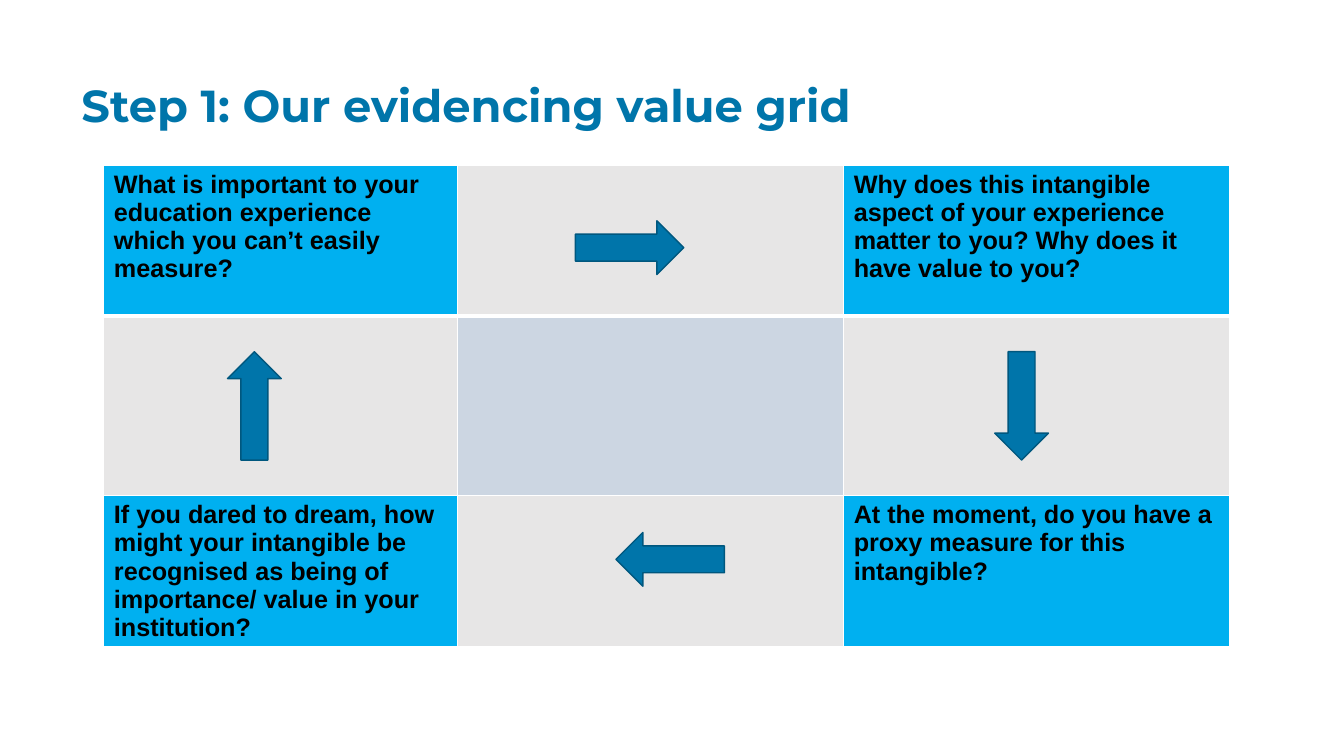
import pptx
import pptx.util
import pptx.dml.color
import pptx.enum.shapes
import pptx.enum.text
import pptx.oxml
import pptx.oxml.ns

Pt = pptx.util.Pt
RGB = pptx.dml.color.RGBColor.from_string
SHAPE = pptx.enum.shapes.MSO_SHAPE
COLORS = {"title": "0075AA", "question": "00B0F0", "path": "E7E6E6", "center": "CCD6E2",
          "text": "000000", "border": "FFFFFF", "outline": "00577E"}


def write(tf, text, font="Arial", size=18, color="text", spacing=1.0):
    p = tf.paragraphs[0]
    p.alignment = pptx.enum.text.PP_ALIGN.LEFT
    p.line_spacing = spacing
    r = p.add_run()
    r.text = text
    r.font.name = font
    r.font.size = Pt(size)
    r.font.bold = True
    r.font.color.rgb = RGB(COLORS[color])


def border(cell, side, width):
    ns = pptx.oxml.ns.nsdecls("a")
    cell._tc.get_or_add_tcPr().append(pptx.oxml.parse_xml(
        f'<a:{side} {ns} w="{Pt(width)}"><a:solidFill>'
        f'<a:srgbClr val="{COLORS["border"]}"/></a:solidFill></a:{side}>'))


prs = pptx.Presentation()
prs.slide_width, prs.slide_height = Pt(960), Pt(540)
s = prs.slides.add_slide(prs.slide_layouts[5])

title = s.shapes.title
title.left, title.top, title.width, title.height = Pt(51), Pt(56.5), Pt(828), Pt(50)
tf = title.text_frame
tf.word_wrap = True
tf.auto_size = pptx.enum.text.MSO_AUTO_SIZE.NONE
tf.vertical_anchor = pptx.enum.text.MSO_ANCHOR.TOP
write(tf, "Step 1: Our evidencing value grid", font="Montserrat", size=32,
      color="title", spacing=0.9)

questions = {
    (0, 0): "What is important to your education experience which you can’t easily measure?",
    (0, 2): "Why does this intangible aspect of your experience matter to you? "
            "Why does it have value to you?",
    (2, 0): "If you dared to dream, how might your intangible be recognised as being "
            "of importance/ value in your institution?",
    (2, 2): "At the moment, do you have a proxy measure for this intangible?",
}
widths = [252.7, 275.8, 275.8]
heights = [107.9, 128.2, 107.9]
table = s.shapes.add_table(3, 3, Pt(74.2), Pt(118), Pt(sum(widths)), Pt(sum(heights))).table
for col, width in zip(table.columns, widths):
    col.width = Pt(width)
for i, height in enumerate(heights):
    table.rows[i].height = Pt(height)
    for j in range(3):
        cell = table.cell(i, j)
        for side in ("lnL", "lnR", "lnT", "lnB"):
            border(cell, side, 3 if i == 0 and side == "lnB" else 1)
        fill = "question" if (i, j) in questions else "center" if i == j == 1 else "path"
        cell.fill.solid()
        cell.fill.fore_color.rgb = RGB(COLORS[fill])
        if (i, j) in questions:
            write(cell.text_frame, questions[i, j])

length, breadth = 77.4, 38.4
for kind, x, y, w, h in [
    (SHAPE.LEFT_ARROW, 440, 380.3, length, breadth),
    (SHAPE.RIGHT_ARROW, 411, 157.7, length, breadth),
    (SHAPE.DOWN_ARROW, 710.5, 251.2, breadth, length),
    (SHAPE.UP_ARROW, 162.5, 251.2, breadth, length),
]:
    sp = s.shapes.add_shape(kind, Pt(x), Pt(y), Pt(w), Pt(h))
    sp.shadow.inherit = False
    sp.fill.solid()
    sp.fill.fore_color.rgb = RGB(COLORS["title"])
    sp.line.color.rgb = RGB(COLORS["outline"])
    sp.line.width = Pt(1)

prs.save("out.pptx")
